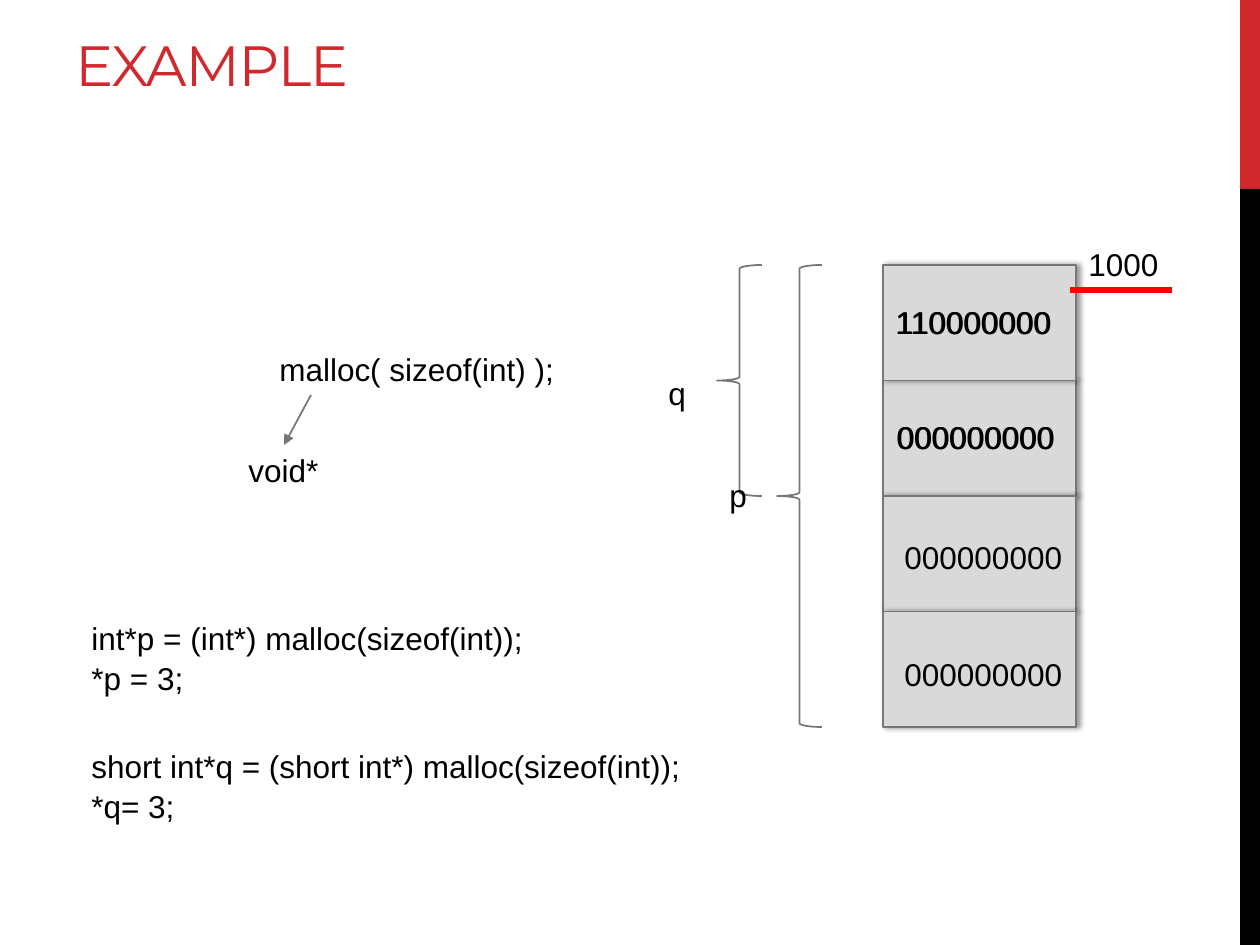
from lxml import etree
from pptx import Presentation
from pptx.dml.color import RGBColor
from pptx.enum.shapes import MSO_CONNECTOR, MSO_SHAPE
from pptx.enum.text import MSO_ANCHOR
from pptx.oxml import parse_xml
from pptx.oxml.ns import nsdecls, qn
from pptx.util import Emu, Pt

COLORS = {name: RGBColor.from_string(value) for name, value in {
    "red": "D1282E", "black": "000000", "cell": "D9D9D9",
    "outline": "777777", "marker": "FF0000"}.items()}
SHADOW = f"""<a:effectLst {nsdecls('a')}>
  <a:outerShdw blurRad="39400" dist="22900" dir="0" rotWithShape="0">
    <a:srgbClr val="000000"><a:alpha val="40000"/></a:srgbClr>
  </a:outerShdw></a:effectLst>"""


def px(*lengths):
    """Turn pixels, 126 to the inch, into EMU."""
    return [Emu(round(length * 914400 / 126)) for length in lengths]


def add_text(left, top, width, height, *lines, font="Arial", size=18, color="black"):
    box = slide.shapes.add_textbox(*px(left, top, width, height))
    frame = box.text_frame
    frame.word_wrap = False
    frame.text = "\n".join(lines)
    for paragraph in frame.paragraphs:
        paragraph.font.name = font
        paragraph.font.size = Pt(size)
        paragraph.font.color.rgb = COLORS[color]
        if len(lines) > 1:
            paragraph.line_spacing = 1.05
    return box


presentation = Presentation()
presentation.slide_width, presentation.slide_height = px(1260, 945)
slide = presentation.slides.add_slide(presentation.slide_layouts[6])

# Side bar
for top, height, color in ((0, 189, "red"), (189, 756, "black")):
    bar = slide.shapes.add_shape(MSO_SHAPE.RECTANGLE, *px(1240, top, 20, height))
    bar.shadow.inherit = False
    bar.fill.solid()
    bar.fill.fore_color.rgb = COLORS[color]
    bar.line.fill.background()

title = add_text(63, 21, 1137, 83, "EXAMPLE", font="Montserrat", size=32.4, color="red")
title.text_frame.word_wrap = True
title.text_frame.vertical_anchor = MSO_ANCHOR.BOTTOM
title.text_frame.paragraphs[0].runs[0].font._element.set("spc", "-60")

# Four memory bytes; the stacking order decides which shadows show
memory_top, byte_height = 265, 115.5
for index in (1, 2, 0, 3):
    byte = slide.shapes.add_shape(
        MSO_SHAPE.RECTANGLE,
        *px(883, memory_top + index * byte_height, 193, byte_height))
    byte.fill.solid()
    byte.fill.fore_color.rgb = COLORS["cell"]
    byte.line.color.rgb = COLORS["outline"]
    byte.line.width = Pt(1)
    byte._element.spPr.append(parse_xml(SHADOW))

# Braces spanning the bytes each pointer reads
for left, byte_count in ((777, 4), (717, 2)):
    brace = slide.shapes.add_shape(
        MSO_SHAPE.LEFT_BRACE, *px(left, memory_top, 45, byte_count * byte_height))
    brace.shadow.inherit = False
    brace.fill.background()
    brace.line.color.rgb = COLORS["outline"]
    brace.line.width = Pt(1)

for left, top, width, height, *lines in (
        (267, 344, 302, 50, "malloc( sizeof(int) );"),
        (236, 445, 96, 50, "void*"),
        (79, 611, 461, 89, "int*p = (int*) malloc(sizeof(int));", "*p = 3;"),
        (79, 739, 620, 89, "short int*q = (short int*) malloc(sizeof(int));", "*q= 3;"),
        (717, 470, 43, 50, "p"),
        (656, 368, 43, 50, "q"),
        (883, 297, 183, 50, "110000000"),
        (884, 412, 184, 50, "000000000"),
        (892, 532, 184, 50, "000000000"),
        (892, 649, 184, 50, "000000000"),
        (884, 297, 183, 50, "110000000"),
        (885, 412, 184, 50, "000000000"),
        (1076, 239, 96, 50, "1000")):
    add_text(left, top, width, height, *lines)

# Arrow to the return type and marker under the address
for ends, color, width, has_arrowhead in (
        ((311, 395, 284, 445), "outline", 1, True),
        ((1070, 290, 1172, 290), "marker", 3.25, False)):
    line = slide.shapes.add_connector(MSO_CONNECTOR.STRAIGHT, *px(*ends))
    line.line.color.rgb = COLORS[color]
    line.line.width = Pt(width)
    if has_arrowhead:
        etree.SubElement(line.line._get_or_add_ln(), qn("a:tailEnd"), type="triangle")
    etree.SubElement(line._element.spPr, qn("a:effectLst"))

presentation.save("out.pptx")
